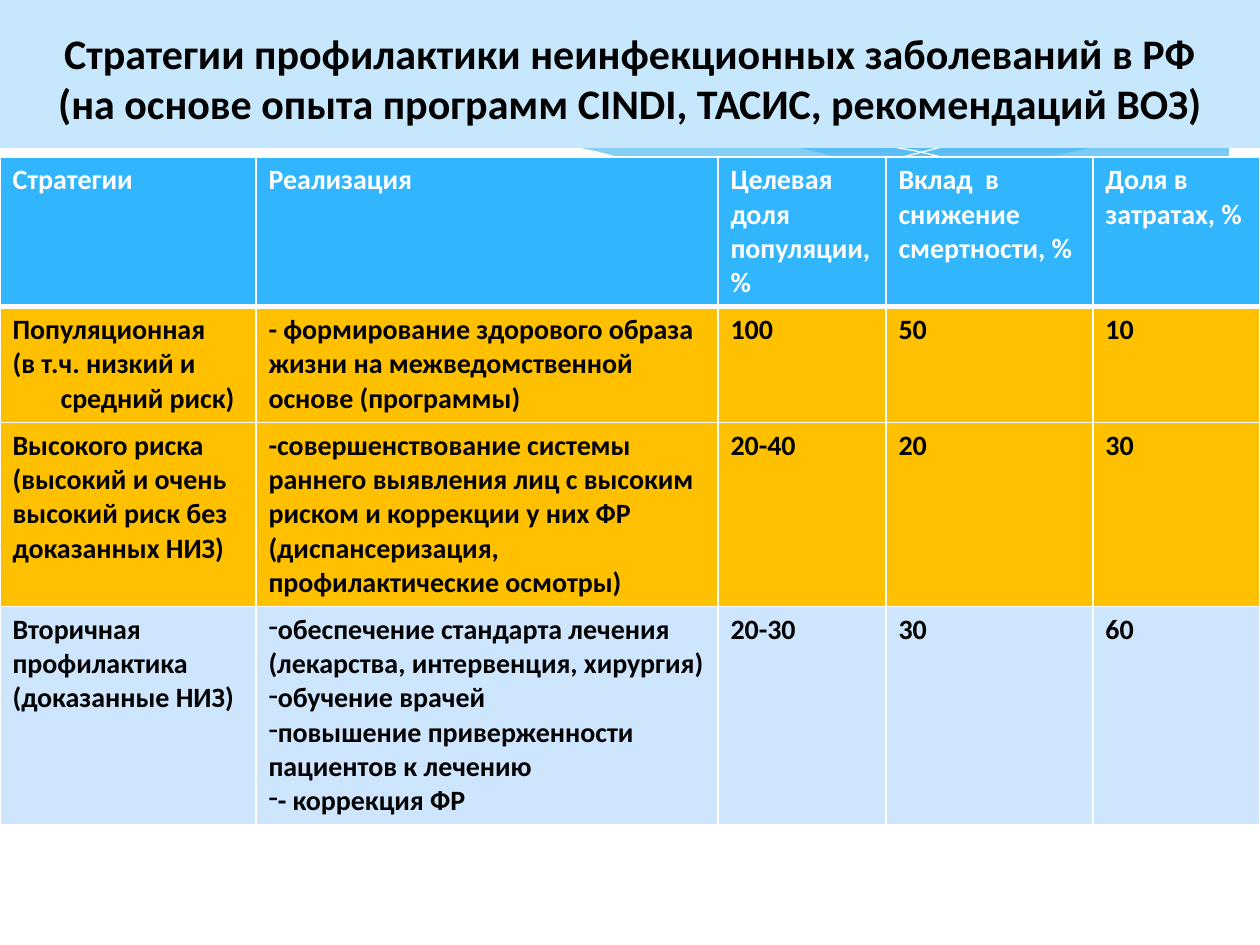
from lxml.etree import SubElement
from pptx import Presentation
from pptx.dml.color import RGBColor
from pptx.enum.shapes import MSO_SHAPE
from pptx.enum.text import MSO_ANCHOR, MSO_AUTO_SIZE, PP_ALIGN
from pptx.oxml.ns import qn
from pptx.util import Emu, Pt

EMU_PER_PX = 914400 / 126
FONT = "Calibri"
BLACK = RGBColor(0x00, 0x00, 0x00)
WHITE = RGBColor(0xFF, 0xFF, 0xFF)
PALE_BLUE = RGBColor(0xC6, 0xE7, 0xFC)
DEEP_BLUE = RGBColor(0x02, 0x93, 0xE0)
SKY_BLUE = RGBColor(0x83, 0xD3, 0xFE)
HEADER_BLUE = RGBColor(0x31, 0xB6, 0xFD)
AMBER = RGBColor(0xFF, 0xC0, 0x00)
ROW_BLUE = RGBColor(0xCE, 0xE5, 0xFE)

RIGHT_WAVE = [(1229, 118), (1142, 131), (1085, 149), (1048, 157), (982, 173), (918, 187),
              (833, 202), (905, 211), (1000, 217), (1089, 214), (1160, 202), (1229, 179)]
LEFT_WAVE = [(1125, 210), (1017, 194), (890, 169), (842, 159), (793, 146), (736, 134),
             (665, 122), (586, 108), (503, 101), (433, 101), (360, 108), (456, 118),
             (538, 134), (566, 146), (619, 159), (713, 180), (799, 197), (876, 208),
             (958, 215), (1044, 218)]
FALLING_CURVE = [(389, 113), (423, 107), (504, 103), (591, 105), (701, 115), (801, 130),
                 (876, 144), (916, 151), (958, 161), (1049, 183), (1143, 209)]
RISING_CURVE = [(772, 190), (823, 178), (876, 164), (907, 156), (942, 147), (978, 140),
                (1053, 125), (1128, 111), (1229, 101)]
WHITE_WAVE = [(1231, 178), (1172, 194), (1102, 209), (1019, 215), (917, 210), (817, 197),
              (699, 175), (634, 161), (599, 152), (563, 144), (493, 128), (428, 116),
              (368, 107), (290, 100), (223, 98), (166, 102), (107, 110), (58, 123),
              (29, 135), (29, 282), (1231, 282)]

TITLE = ["Стратегии профилактики неинфекционных заболеваний в РФ",
         "(на основе опыта программ CINDI, ТАСИС, рекомендаций ВОЗ)"]
COLUMN_WIDTHS = [256, 462, 168, 207, 167]
ROW_HEIGHTS = [149, 116, 184, 217]
ROW_FILLS = [HEADER_BLUE, AMBER, AMBER, ROW_BLUE]
ROWS = [
    ["Стратегии", "Реализация", "Целевая доля популяции, %",
     "Вклад  в  снижение смертности, %", "Доля в затратах, %"],
    ["Популяционная\n(в т.ч. низкий и средний риск)",
     "- формирование здорового образа жизни на межведомственной основе (программы)",
     "100", "50", "10"],
    ["Высокого риска\n(высокий и очень высокий риск без доказанных НИЗ)",
     "-совершенствование системы раннего выявления лиц с высоким риском и коррекции "
     "у них ФР (диспансеризация, профилактические осмотры)",
     "20-40", "20", "30"],
    ["Вторичная профилактика\n(доказанные НИЗ)",
     "обеспечение стандарта лечения (лекарства, интервенция, хирургия)\n"
     "обучение врачей\nповышение приверженности пациентов к лечению\n- коррекция ФР",
     "20-30", "30", "60"],
]
HANGING_CELL = (1, 0)
BULLETED_CELL = (3, 1)


def px(length):
    return Emu(round(length * EMU_PER_PX))


def style_font(para, size, color):
    para.font.name = FONT
    para.font.size = Pt(size)
    para.font.bold = True
    para.font.color.rgb = color


def add_gradient_panel(slide):
    panel = slide.shapes.add_shape(MSO_SHAPE.ROUNDED_RECTANGLE,
                                   px(31), px(31), px(1198), px(197))
    panel.adjustments[0] = 0.07
    panel.shadow.inherit = False
    panel.line.fill.background()
    panel.fill.gradient()
    panel.fill.gradient_angle = 270
    for stop, color, position in zip(panel.fill.gradient_stops,
                                     (DEEP_BLUE, SKY_BLUE), (0, 0.9)):
        stop.color.rgb = color
        stop.position = position


def add_outline(slide, points, closed):
    builder = slide.shapes.build_freeform(*points[0], scale=EMU_PER_PX)
    builder.add_line_segments(points[1:], close=closed)
    outline = builder.convert_to_shape()
    outline.shadow.inherit = False
    return outline


def add_wave(slide, points, color, opacity=100):
    wave = add_outline(slide, points, True)
    wave.line.fill.background()
    wave.fill.solid()
    wave.fill.fore_color.rgb = color
    if opacity < 100:
        tint = wave.fill._xPr.find(".//" + qn("a:srgbClr"))
        SubElement(tint, qn("a:alpha"), val=str(opacity * 1000))


def add_curve(slide, points):
    curve = add_outline(slide, points, False)
    curve.fill.background()
    curve.line.color.rgb = WHITE
    curve.line.width = Pt(0)


def format_title(slide):
    title = slide.shapes.title
    slide.shapes._spTree.append(title._element)  # in front of the waves
    title.left, title.top, title.width, title.height = px(0), px(0), px(1260), px(148)
    title.fill.solid()
    title.fill.fore_color.rgb = PALE_BLUE
    frame = title.text_frame
    frame.text = "\n".join(TITLE)
    frame.word_wrap = True
    frame.auto_size = MSO_AUTO_SIZE.NONE
    frame.vertical_anchor = MSO_ANCHOR.MIDDLE
    frame.margin_top, frame.margin_bottom = px(13), px(5)
    for para in frame.paragraphs:
        para.alignment = PP_ALIGN.CENTER
        style_font(para, 24, BLACK)


def add_border(cell, side, points):
    border = SubElement(cell._tc.get_or_add_tcPr(), qn("a:ln" + side), w=str(Pt(points)))
    fill = SubElement(border, qn("a:solidFill"))
    SubElement(fill, qn("a:srgbClr"), val=str(WHITE))


def set_indent(para, margin, indent):
    properties = para._p.get_or_add_pPr()
    properties.set("marL", str(px(margin)))
    properties.set("indent", str(px(indent)))


def add_dash_bullet(para):
    properties = para._p.get_or_add_pPr()
    bullet_font = properties.makeelement(qn("a:buFontTx"))
    bullet = properties.makeelement(qn("a:buChar"), char="-")
    properties.insert(0, bullet_font)
    bullet_font.addnext(bullet)


def fill_cell(cell, row, column):
    widths = {"L": 1, "R": 1, "T": 3 if row == 1 else 1, "B": 3 if row == 0 else 1}
    for side, points in widths.items():
        add_border(cell, side, points)
    cell.fill.solid()
    cell.fill.fore_color.rgb = ROW_FILLS[row]
    cell.text = ROWS[row][column]
    for para in cell.text_frame.paragraphs:
        style_font(para, 16, WHITE if row == 0 else BLACK)
        if (row, column) == HANGING_CELL:
            set_indent(para, 48, -48)
        if (row, column) == BULLETED_CELL:
            add_dash_bullet(para)


def add_strategy_table(slide):
    table = slide.shapes.add_table(len(ROWS), len(COLUMN_WIDTHS), px(0), px(157),
                                   px(sum(COLUMN_WIDTHS)), px(sum(ROW_HEIGHTS))).table
    for column, width in zip(table.columns, COLUMN_WIDTHS):
        column.width = px(width)
    for row, height in enumerate(ROW_HEIGHTS):
        table.rows[row].height = px(height)
        for column in range(len(COLUMN_WIDTHS)):
            fill_cell(table.cell(row, column), row, column)


def main():
    deck = Presentation()
    deck.slide_width, deck.slide_height = px(1260), px(945)
    slide = deck.slides.add_slide(deck.slide_layouts[5])
    add_gradient_panel(slide)
    add_wave(slide, RIGHT_WAVE, PALE_BLUE, 29)
    add_wave(slide, LEFT_WAVE, PALE_BLUE, 40)
    add_curve(slide, FALLING_CURVE)
    add_curve(slide, RISING_CURVE)
    add_wave(slide, WHITE_WAVE, WHITE)
    format_title(slide)
    add_strategy_table(slide)
    deck.save("out.pptx")


if __name__ == "__main__":
    main()
